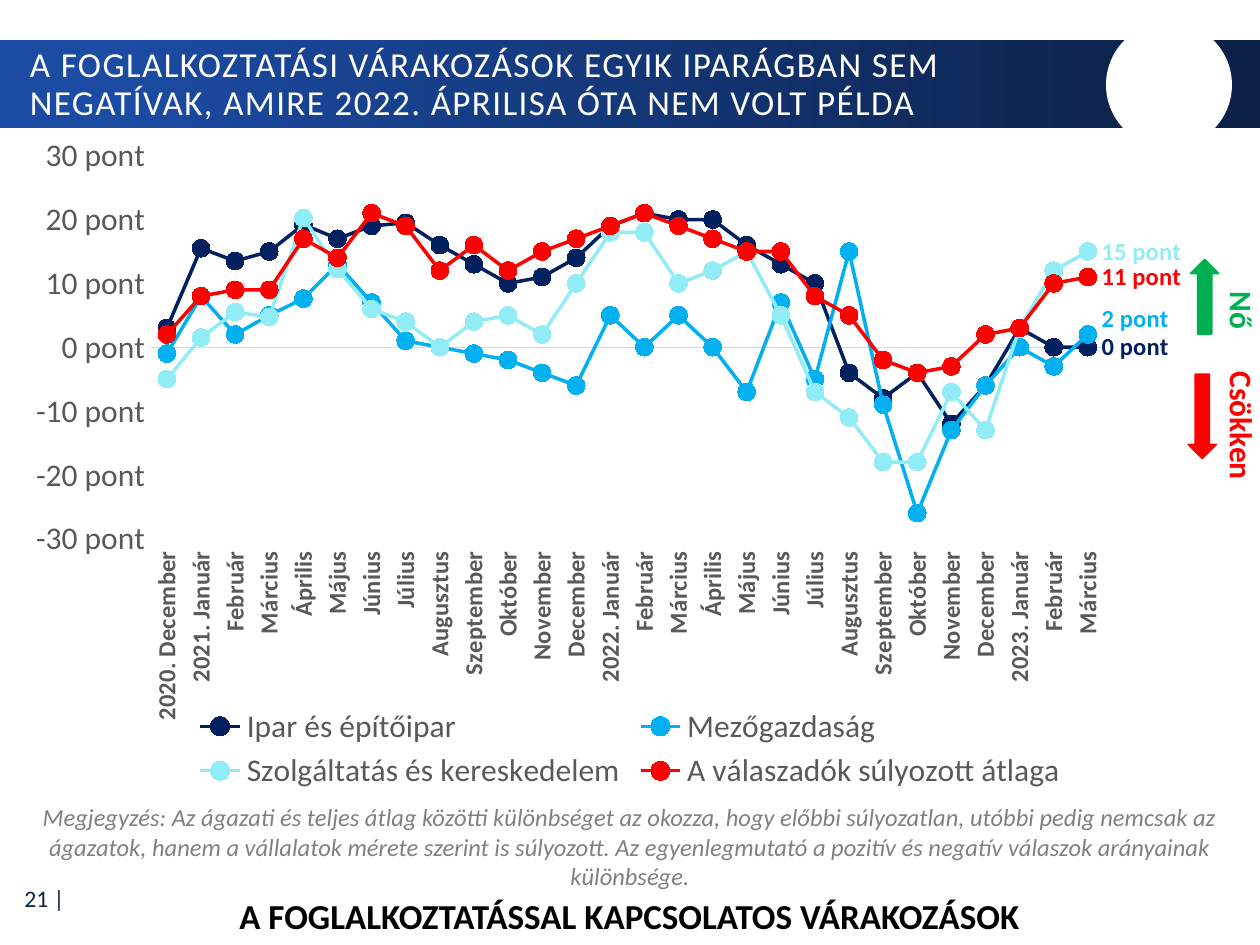
from lxml.etree import SubElement
from pptx import Presentation
from pptx.chart.data import CategoryChartData
from pptx.dml.color import RGBColor
from pptx.enum.chart import (XL_CHART_TYPE, XL_LABEL_POSITION, XL_LEGEND_POSITION,
                             XL_MARKER_STYLE, XL_TICK_LABEL_POSITION, XL_TICK_MARK)
from pptx.enum.shapes import MSO_SHAPE
from pptx.enum.text import MSO_ANCHOR, PP_ALIGN
from pptx.oxml import parse_xml
from pptx.oxml.ns import nsdecls, qn
from pptx.util import Pt

FONT = "Calibri"
COLORS = {
    "band_start": "1B4BA3", "band_end": "0C2148", "white": "FFFFFF", "black": "000000",
    "note": "808080", "axis_text": "595959", "axis_line": "D9D9D9",
    "up": "00B050", "down": "FF0000", "industry": "002060", "farming": "00B0F0",
    "services": "92ECF6", "average": "FF0000",
}
POINT_FORMAT = '0\\ "pont"'
MONTHS = ["Január", "Február", "Március", "Április", "Május", "Június", "Július",
          "Augusztus", "Szeptember", "Október", "November", "December"]
CATEGORIES = (["2020. December", "2021. Január"] + MONTHS[1:] + ["2022. Január"]
              + MONTHS[1:] + ["2023. Január"] + MONTHS[1:3])
SERIES = [
    ("Ipar és építőipar", "industry",
     [3, 15.5, 13.5, 15, 19.22, 17, 19, 19.5, 16, 13, 10, 11, 14, 19,
      21, 20, 20, 16, 13, 10, -4, -8, -4, -12, -6, 3, 0, 0]),
    ("Mezőgazdaság", "farming",
     [-1, 8, 2, 5, 7.62, 13, 7, 1, 0, -1, -2, -4, -6, 5,
      0, 5, 0, -7, 7, -5, 15, -9, -26, -13, -6, 0, -3, 2]),
    ("Szolgáltatás és kereskedelem", "services",
     [-5, 1.5, 5.5, 4.75, 20.24, 12.25, 6, 4, 0, 4, 5, 2, 10, 18,
      18, 10, 12, 15, 5, -7, -11, -18, -18, -7, -13, 3, 12, 15]),
    ("A válaszadók súlyozott átlaga", "average",
     [2, 8, 9, 9, 17, 14, 21, 19, 12, 16, 12, 15, 17, 19,
      21, 19, 17, 15, 15, 8, 5, -2, -4, -3, 2, 3, 10, 11]),
]


def color(name):
    return RGBColor.from_string(COLORS[name])


def style_font(font, size, color_name, bold=False, italic=False):
    font.name = FONT
    font.size = Pt(size)
    font.bold = bold
    font.italic = italic
    font.color.rgb = color(color_name)


def add_shape(slide, kind, box, fill_name, outlined=False, rotation=0):
    shape = slide.shapes.add_shape(kind, *map(Pt, box))
    shape.shadow.inherit = False
    shape.rotation = rotation
    shape.fill.solid()
    shape.fill.fore_color.rgb = color(fill_name)
    if outlined:
        shape.line.color.rgb = color(fill_name)
        shape.line.width = Pt(1)
    else:
        shape.line.fill.background()
    return shape


def add_band(slide):
    band = add_shape(slide, MSO_SHAPE.RECTANGLE, (0, 23, 720, 50.4), "band_start")
    band.fill.gradient()
    band.fill.gradient_angle = 0
    stops = ((0.09, "band_start"), (0.95, "band_end"))
    for stop, (position, name) in zip(band.fill.gradient_stops, stops):
        stop.position = position
        stop.color.rgb = color(name)


def add_text(slide, box, runs, size, align=PP_ALIGN.LEFT, anchor=MSO_ANCHOR.TOP,
             bold=False, italic=False):
    shape = slide.shapes.add_textbox(*map(Pt, box))
    frame = shape.text_frame
    frame.word_wrap = True
    frame.vertical_anchor = anchor
    paragraph = frame.paragraphs[0]
    paragraph.alignment = align
    for text, color_name in runs:
        run = paragraph.add_run()
        run.text = text
        style_font(run.font, size, color_name, bold, italic)
    return frame


def add_title(slide, text):
    frame = add_text(slide, (10, 24.5, 621.5, 48), [(text, "white")], 20,
                     anchor=MSO_ANCHOR.MIDDLE)
    paragraph = frame.paragraphs[0]
    paragraph.line_spacing = 0.9
    paragraph.runs[0].font._element.set("spc", "80")


def add_direction_text(slide):
    frame = add_text(slide, (688.3, 159.8, 36, 125.3),
                     [("Nő\t", "up"), ("Csökken", "down")], 18, bold=True)
    frame._element.find(qn("a:bodyPr")).set("vert", "vert")
    properties = frame.paragraphs[0]._element.get_or_add_pPr()
    tabs = SubElement(properties, qn("a:tabLst"))
    SubElement(tabs, qn("a:tab"), pos=str(Pt(45.5)), algn="l")


def manual_layout(**values):
    children = "".join(f'<c:{key} val="{value}"/>' for key, value in values.items())
    return parse_xml(f'<c:layout {nsdecls("c")}><c:manualLayout>{children}'
                     '</c:manualLayout></c:layout>')


def style_axes(chart):
    category_axis, value_axis = chart.category_axis, chart.value_axis
    for axis in (category_axis, value_axis):
        axis.has_major_gridlines = False
        axis.major_tick_mark = axis.minor_tick_mark = XL_TICK_MARK.NONE
    category_axis.tick_label_position = XL_TICK_LABEL_POSITION.LOW
    category_axis.format.line.color.rgb = color("axis_line")
    category_axis.format.line.width = Pt(0.75)
    style_font(category_axis.tick_labels.font, 14, "axis_text", bold=True)
    chart.element.xpath(".//c:catAx/c:txPr/a:bodyPr")[0].set("rot", "-5400000")
    value_axis.minimum_scale, value_axis.maximum_scale = -30, 30
    value_axis.major_unit = 10
    value_axis.format.line.fill.background()
    value_axis.tick_labels.number_format = POINT_FORMAT
    value_axis.tick_labels.number_format_is_linked = False
    style_font(value_axis.tick_labels.font, 18, "axis_text")


def style_series(series, color_name):
    series.smooth = False
    series.format.line.color.rgb = color(color_name)
    series.format.line.width = Pt(2)
    marker = series.marker
    marker.style = XL_MARKER_STYLE.CIRCLE
    marker.size = 10
    marker.format.fill.solid()
    marker.format.fill.fore_color.rgb = color(color_name)
    marker.format.line.color.rgb = color(color_name)
    series.data_labels.show_value = False
    label = series.points[len(CATEGORIES) - 1].data_label
    style_font(label.font, 14, color_name, bold=True)
    label.position = XL_LABEL_POSITION.RIGHT


def add_expectations_chart(slide):
    data = CategoryChartData(number_format=POINT_FORMAT)
    data.categories = CATEGORIES
    for name, _, values in SERIES:
        data.add_series(name, values)
    chart = slide.shapes.add_chart(XL_CHART_TYPE.LINE_MARKERS, Pt(0), Pt(73),
                                   Pt(720), Pt(382), data).chart
    chart.has_title = False
    style_font(chart.font, 18, "black")
    chart.plots[0].vary_by_categories = False
    style_axes(chart)
    for series, (_, color_name, _) in zip(chart.plots[0].series, SERIES):
        style_series(series, color_name)
    chart.has_legend = True
    chart.legend.position = XL_LEGEND_POSITION.BOTTOM
    chart.legend.include_in_layout = False
    style_font(chart.legend.font, 18, "axis_text")
    plot_area = chart.element.xpath("c:chart/c:plotArea")[0]
    for layout in plot_area.findall(qn("c:layout")):
        plot_area.remove(layout)
    plot_area.insert(0, manual_layout(layoutTarget="inner", xMode="edge", yMode="edge",
                                      x=0.119, y=0.042, w=0.758, h=0.573))
    farming_label = chart.element.xpath(".//c:ser[c:idx/@val='1']/c:dLbls/c:dLbl")[0]
    farming_label.insert(1, manual_layout(x=0, y=-0.024))


def main():
    presentation = Presentation()
    presentation.slide_width, presentation.slide_height = Pt(720), Pt(540)
    slide = presentation.slides.add_slide(presentation.slide_layouts[6])
    add_text(slide, (0.7, 499.7, 43.2, 26.6), [("21 |", "band_end")], 13.5,
             PP_ALIGN.RIGHT, MSO_ANCHOR.MIDDLE)
    add_band(slide)
    add_shape(slide, MSO_SHAPE.OVAL, (632, 12.5, 72, 72), "white")
    add_title(slide, "A FOGLALKOZTATÁSI VÁRAKOZÁSOK EGYIK IPARÁGBAN SEM NEGATÍVAK, "
                     "AMIRE 2022. ÁPRILISA ÓTA NEM VOLT PÉLDA")
    add_text(slide, (61.2, 507.6, 597, 31.5),
             [("A FOGLALKOZTATÁSSAL KAPCSOLATOS VÁRAKOZÁSOK", "black")], 20,
             PP_ALIGN.CENTER, bold=True)
    add_shape(slide, MSO_SHAPE.UP_ARROW, (680.4, 148.3, 16, 42.5), "up", outlined=True)
    add_shape(slide, MSO_SHAPE.UP_ARROW, (679, 213.8, 16, 48.2), "down", outlined=True,
              rotation=180)
    add_direction_text(slide)
    add_text(slide, (0, 455, 720, 58.3),
             [("Megjegyzés: Az ágazati és teljes átlag közötti különbséget az okozza, hogy "
               "előbbi súlyozatlan, utóbbi pedig nemcsak az ágazatok, hanem a vállalatok "
               "mérete szerint is súlyozott. Az egyenlegmutató a pozitív és negatív "
               "válaszok arányainak különbsége.", "note")], 14, PP_ALIGN.CENTER, italic=True)
    add_expectations_chart(slide)
    presentation.save("out.pptx")


if __name__ == "__main__":
    main()
